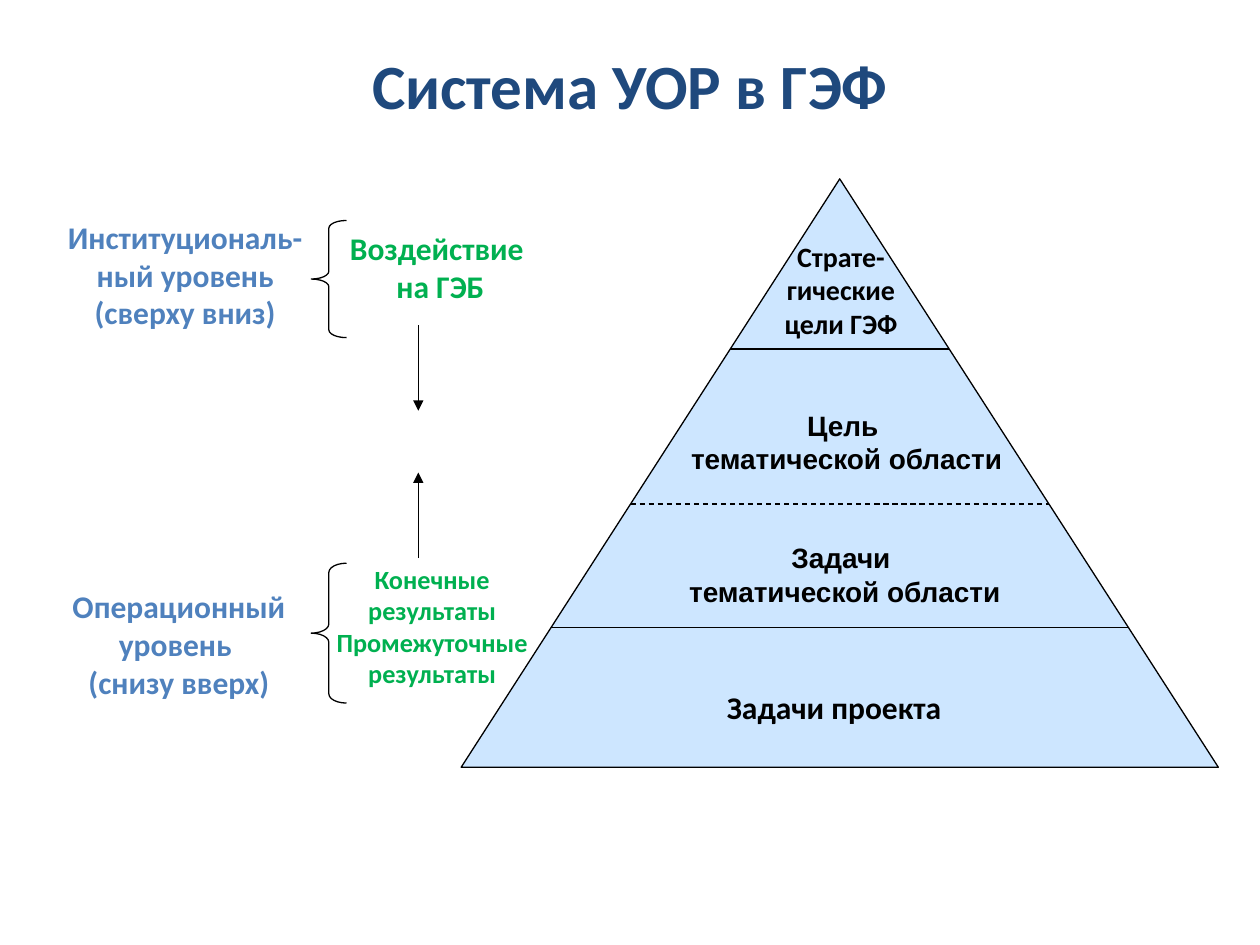
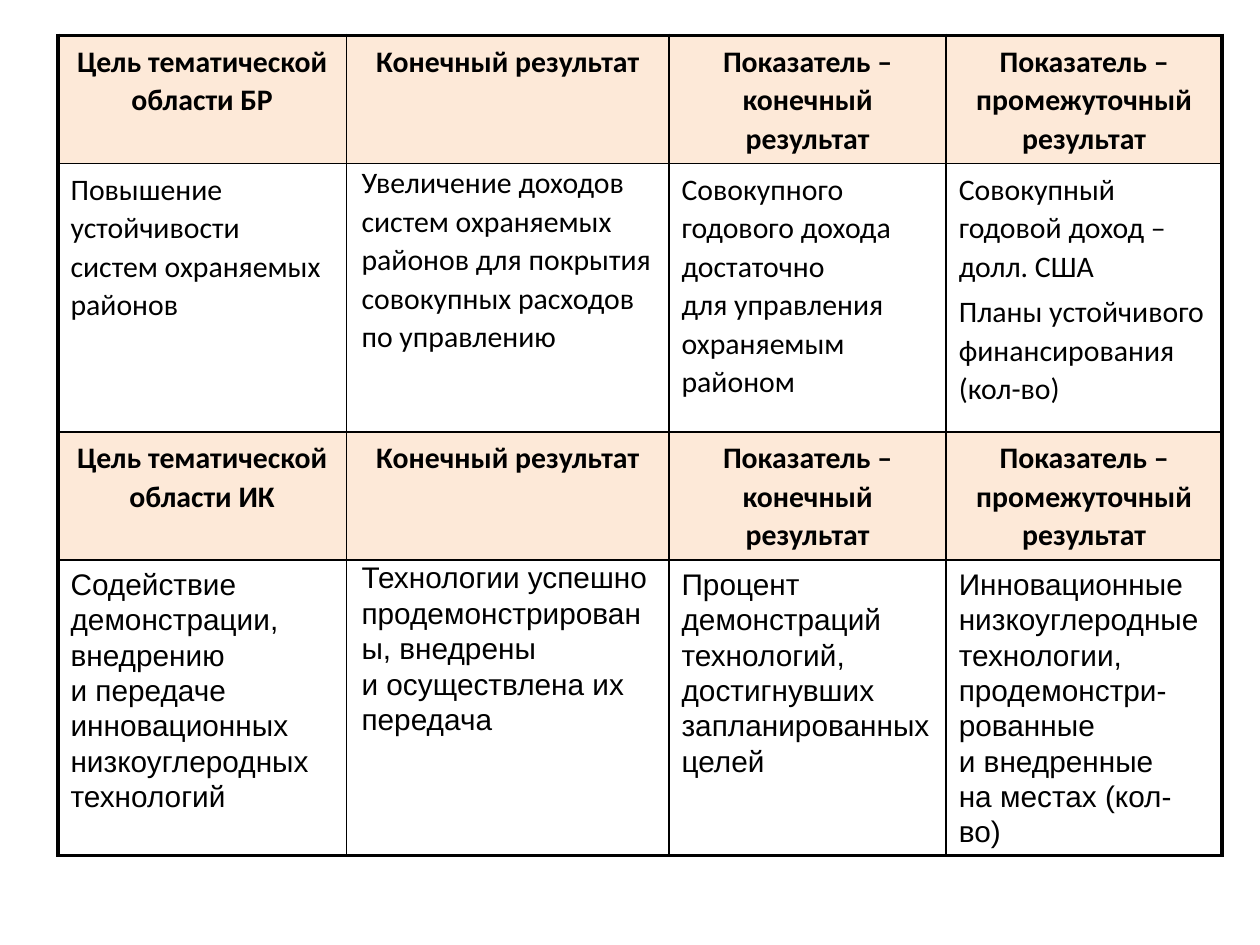
from lxml import etree
from pptx import Presentation
from pptx.dml.color import RGBColor
from pptx.enum import dml, shapes, text
from pptx.oxml.ns import qn
from pptx.util import Inches, Pt

INK = {"black": "000000", "title": "1F497D", "blue": "4F81BD",
       "green": "00B050", "sky": "99CCFF", "peach": "FDE9D8"}
SLIDE = (10, 7.5)
THIN, THICK = 1, 2.25
WIDE, SLIM = (0.1, 0.05), (0.07, 0.04)

TITLE = "Система УОР в ГЭФ"
PYRAMID = (3.66, 1.42, 6.01, 4.67)
LEVELS = [(2.77, False), (4, True), (4.98, False)]  # height on slide, dashed
BRACES = [(1.75, 0.93, 0.22), (4.47, 1.11, 0.26)]   # top, height, curve
ARROWS = [(2.58, 3.26), (4.43, 3.75)]
ARROW_X, BRACE_X, BRACE_W = 3.32, 2.47, 0.28
LABELS = [  # words, place, size, font, colour, insets
    ("Страте-\vгические цели ГЭФ", (5.99, 1.86, 1.37, 0.9), 16, "Calibri", "black", SLIM),
    ("Цель \vтематической области", (5.3, 3.2, 2.84, 0.58), 16, "Arial", "black", SLIM),
    ("Задачи \vтематической области", (5.08, 4.25, 3.25, 0.55), 16, "Arial", "black", SLIM),
    ("Задачи проекта", (4.91, 5.42, 3.42, 0.4), 18, "Calibri", "black", SLIM),
    ("Воздействие \vна ГЭБ", (2.44, 1.77, 2.11, 0.82), 18, "Calibri", "green", WIDE),
    ("Конечные результаты\nПромежуточные результаты", (2.55, 4.42, 1.76, 1.15),
     15, "Calibri", "green", WIDE),
    ("Институциональ-\vный уровень (сверху вниз)", (0.33, 1.68, 2.28, 1.07),
     18, "Calibri", "blue", WIDE),
    ("Операционный уровень \v(снизу вверх)", (0.33, 4.61, 2.18, 1.02),
     18, "Calibri", "blue", WIDE),
]

HEADS = ["Конечный результат", "Показатель – конечный результат",
         "Показатель – промежуточный результат"]
AREAS = [  # code, body font, body cells
    ("БР", "Calibri", [
        "Повышение устойчивости систем охраняемых районов",
        "Увеличение доходов систем охраняемых районов для покрытия "
        "совокупных расходов по управлению",
        "Совокупного годового дохода достаточно \vдля управления охраняемым районом",
        "Совокупный годовой доход – долл. США\nПланы устойчивого финансирования (кол-во)"]),
    ("ИК", "Arial", [
        "Содействие демонстрации, внедрению \vи передаче инновационных "
        "низкоуглеродных технологий",
        "Технологии успешно продемонстрированы, внедрены\vи осуществлена их передача",
        "Процент демонстраций технологий, достигнувших запланированных целей",
        "Инновационные низкоуглеродные технологии, продемонстри-рованные "
        "\vи внедренные \vна местах (кол-во)"]),
]
GRID_AT = (0.46, 0.28)
COLS = [2.29, 2.56, 2.2, 2.19]
ROWS = [0.86, 2.13, 0.74, 2.17]


def rgb(name):
    return RGBColor.from_string(INK[name])


def inch(*nums):
    return [Inches(n) for n in nums]


def write(frame, words, size, face, ink, bold=True, align=text.PP_ALIGN.CENTER):
    frame.text = words
    frame.word_wrap = True
    for para in frame.paragraphs:
        para.alignment = align
        for run in para.runs:
            font = run.font
            font.size, font.name, font.bold = Pt(size), face, bold
            font.color.rgb = rgb(ink)


def inset(box, pad):
    """Set side and top/bottom margins of a text frame or a table cell."""
    box.margin_left = box.margin_right = Inches(pad[0])
    box.margin_top = box.margin_bottom = Inches(pad[1])


def outline(item):
    item.line.color.rgb = rgb("black")
    item.line.width = Pt(0.75)


def add_line(slide, x1, y1, x2, y2, dash=False, arrow=False):
    line = slide.shapes.add_connector(shapes.MSO_CONNECTOR.STRAIGHT, *inch(x1, y1, x2, y2))
    outline(line)
    if dash:
        line.line.dash_style = dml.MSO_LINE.DASH
    props = line._element.spPr
    if arrow:
        etree.SubElement(props.find(qn("a:ln")), qn("a:tailEnd"), type="triangle")
    etree.SubElement(props, qn("a:effectLst"))


def draw_pyramid(slide):
    left, top, width, height = PYRAMID
    body = slide.shapes.add_shape(shapes.MSO_SHAPE.ISOSCELES_TRIANGLE, *inch(*PYRAMID))
    body.shadow.inherit = False
    body.fill.solid()
    body.fill.fore_color.rgb = rgb("sky")
    tint = body._element.spPr.find(qn("a:solidFill"))[0]
    etree.SubElement(tint, qn("a:alpha"), val="49000")
    outline(body)
    mid = left + width / 2
    for y, dash in LEVELS:
        half = width / 2 * (y - top) / height
        add_line(slide, mid - half, y, mid + half, y, dash=dash)


def draw_system(deck):
    slide = deck.slides.add_slide(deck.slide_layouts[5])
    title = slide.shapes.title
    title.left, title.top, title.width, title.height = inch(0.5, 0.17, 9, 1)
    write(title.text_frame, TITLE, 36, "Calibri", "title")
    title.text_frame.vertical_anchor = text.MSO_ANCHOR.MIDDLE
    draw_pyramid(slide)
    for top, height, curve in BRACES:
        brace = slide.shapes.add_shape(shapes.MSO_SHAPE.LEFT_BRACE,
                                       *inch(BRACE_X, top, BRACE_W, height))
        brace.shadow.inherit = False
        brace.adjustments[0] = curve
        brace.fill.background()
        outline(brace)
    for start, end in ARROWS:
        add_line(slide, ARROW_X, start, ARROW_X, end, arrow=True)
    for words, place, size, face, ink, pad in LABELS:
        frame = slide.shapes.add_textbox(*inch(*place)).text_frame
        inset(frame, pad)
        write(frame, words, size, face, ink)


def edge(cell, row, col):
    """Draw thick borders on the table's rim and thin ones inside."""
    rim = {"L": col == 0, "R": col == len(COLS) - 1,
           "T": row == 0, "B": row == len(ROWS) - 1}
    props = cell._tc.get_or_add_tcPr()
    for side, outer in rim.items():
        width = Pt(THICK if outer else THIN)
        line = etree.SubElement(props, qn("a:ln" + side), w=str(int(width)))
        fill = etree.SubElement(line, qn("a:solidFill"))
        etree.SubElement(fill, qn("a:srgbClr"), val=INK["black"])


def fill_cell(cell, words, face, head, col):
    if head:
        cell.fill.solid()
        cell.fill.fore_color.rgb = rgb("peach")
    else:
        cell.fill.background()
    inset(cell, (0.12, 0) if col == 1 and not head else WIDE)
    align = text.PP_ALIGN.CENTER if head else text.PP_ALIGN.LEFT
    write(cell.text_frame, words, 17, face, "black", head, align)
    for n, para in enumerate(cell.text_frame.paragraphs):
        para.line_spacing = 1.06
        para.space_before = Pt(2 if n else 0)
        para.space_after = Pt(2)


def draw_table(deck):
    slide = deck.slides.add_slide(deck.slide_layouts[6])
    grid = slide.shapes.add_table(len(ROWS), len(COLS),
                                  *inch(*GRID_AT, sum(COLS), sum(ROWS))).table
    grid.first_row = grid.horz_banding = False
    for col, width in zip(grid.columns, COLS):
        col.width = Inches(width)
    for row, height in zip(grid.rows, ROWS):
        row.height = Inches(height)
    lines = []
    for code, face, body in AREAS:
        lines.append(("Calibri", True, ["Цель тематической области " + code] + HEADS))
        lines.append((face, False, body))
    for r, (face, head, cells) in enumerate(lines):
        for c, words in enumerate(cells):
            cell = grid.cell(r, c)
            edge(cell, r, c)
            fill_cell(cell, words, face, head, c)


def main():
    deck = Presentation()
    deck.slide_width, deck.slide_height = inch(*SLIDE)
    draw_system(deck)
    draw_table(deck)
    deck.save("out.pptx")


if __name__ == "__main__":
    main()
